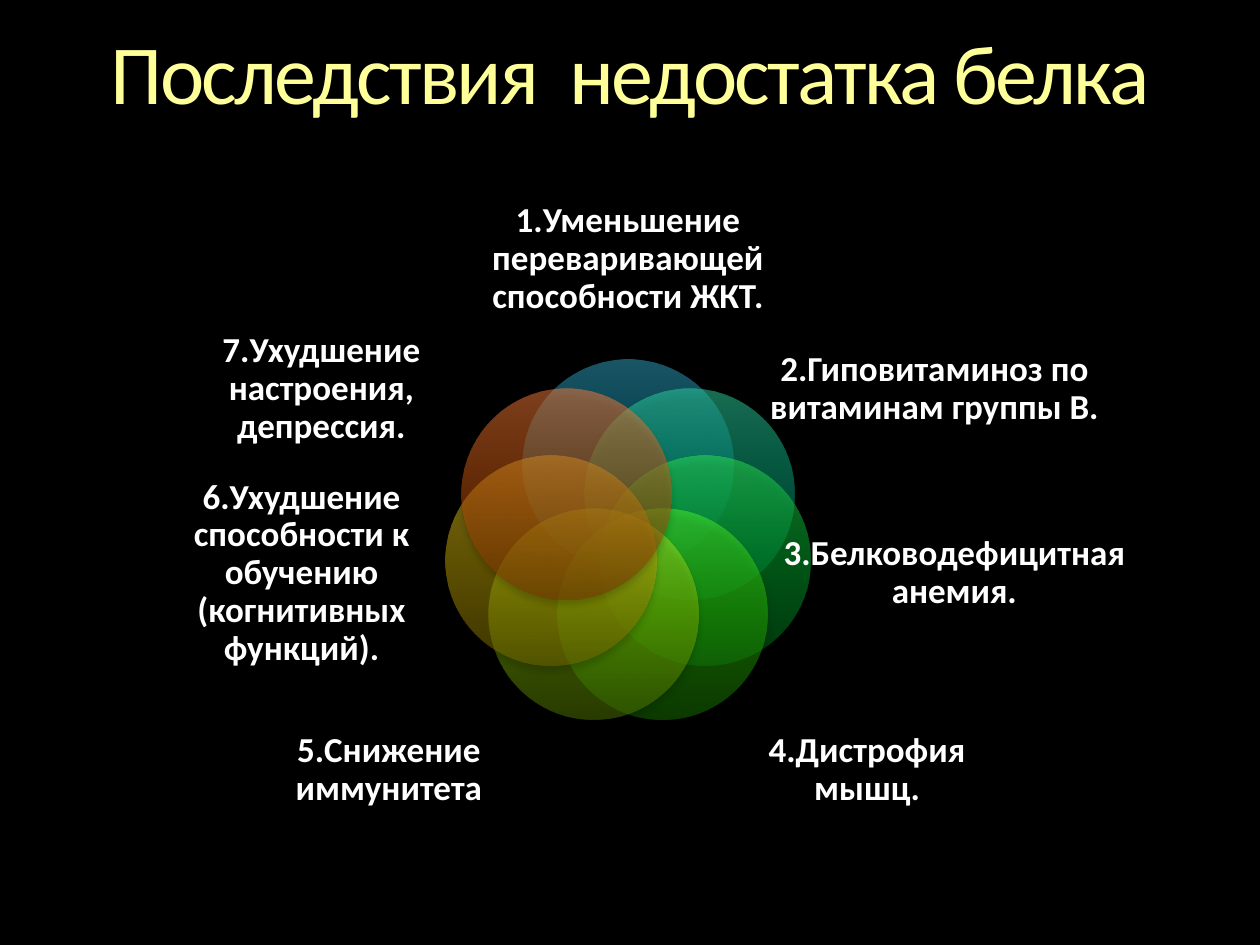
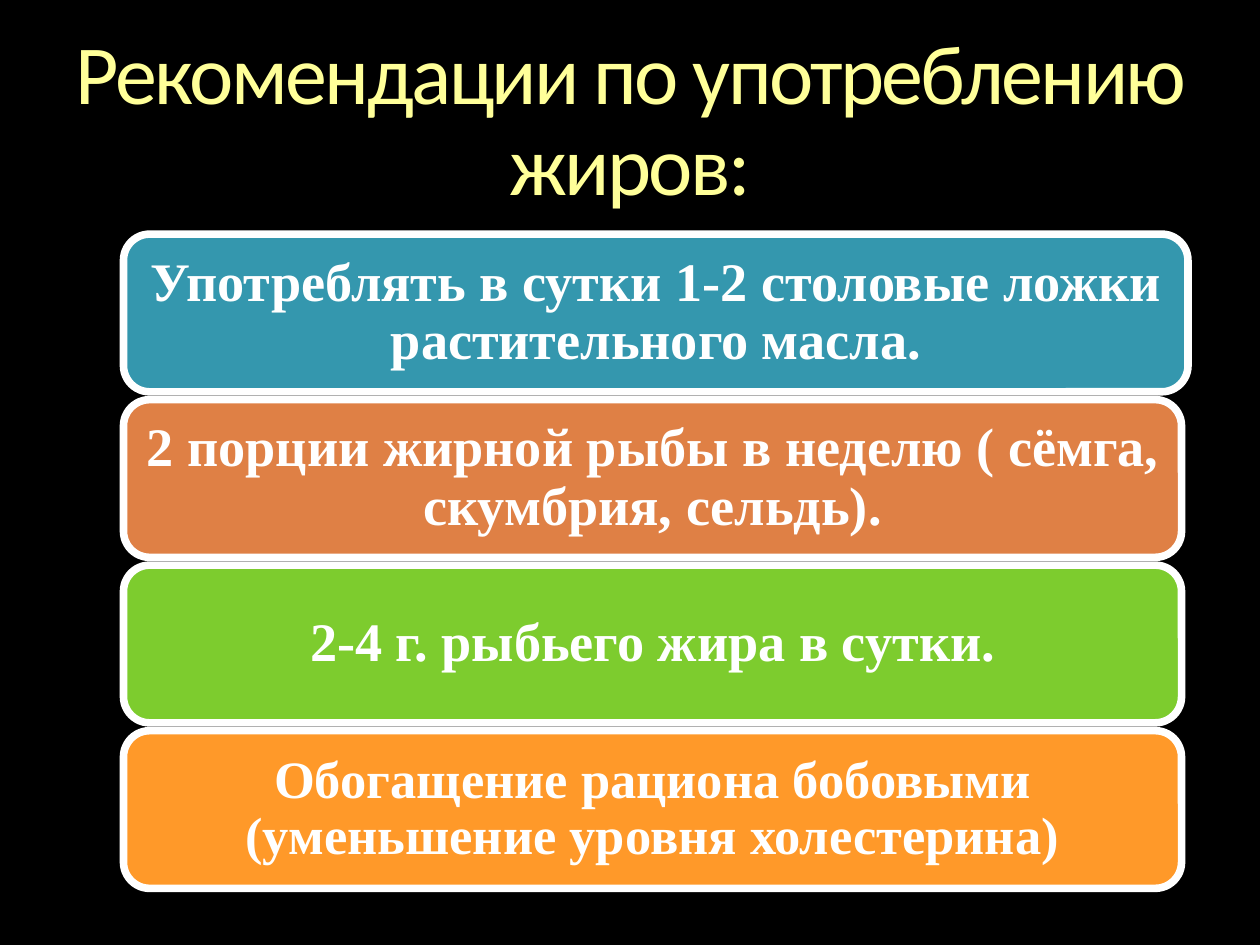
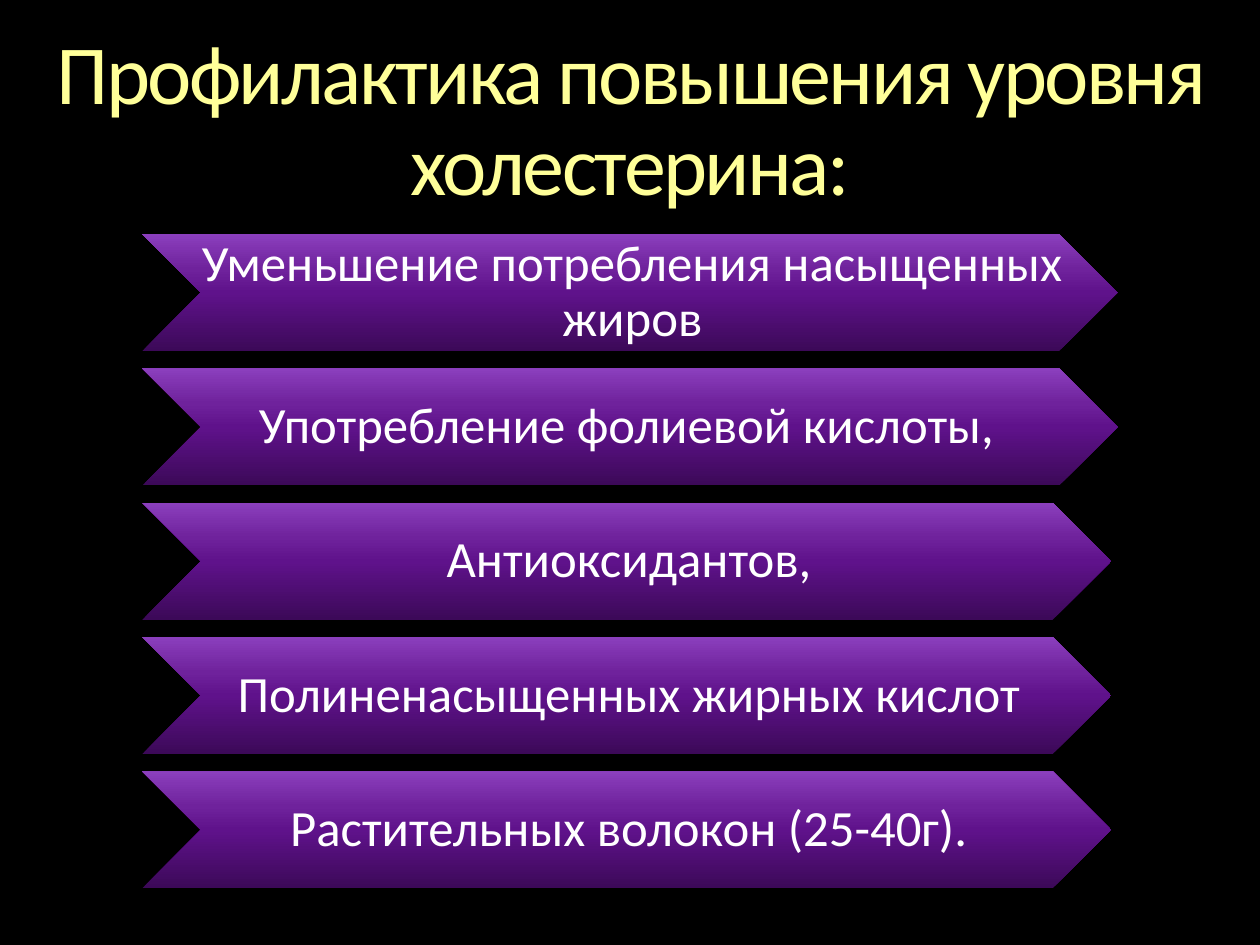
from dataclasses import dataclass
from math import cos, pi, sin

from lxml.etree import SubElement
from pptx import Presentation
from pptx.dml.color import RGBColor
from pptx.enum.shapes import MSO_SHAPE
from pptx.enum.text import MSO_ANCHOR, PP_ALIGN
from pptx.oxml.ns import qn
from pptx.util import Cm, Pt


@dataclass(frozen=True)
class Theme:
    back: str = "000000"
    ink: str = "FFFFFF"
    head: str = "FFFF99"
    sans: str = "Calibri"
    serif: str = "Times New Roman"
    title: int = 48
    label: int = 20
    card: int = 31
    arrow: int = 29
    stops: tuple = (0, 50, 70, 100)
    violet: tuple = ("3C0958", "5F128B", "6F229C", "8B3FBD")
    # Circle gradients, clockwise from the top
    rings: tuple = (
        ("015062", "077E99", "178EAB", "35ADCE"),
        ("00684B", "03A577", "14B889", "31DCA7"),
        ("006D1C", "00AF2C", "10C53B", "2EEA54"),
        ("187200", "27B700", "35CF0F", "4EF62C"),
        ("517600", "82BD02", "94D313", "B4FC2E"),
        ("7B6900", "C1A506", "D7BA17", "FFDE33"),
        ("7D3203", "C4520B", "DB631C", "FF803C"),
    )
    cards: tuple = ("3497AE", "DF8045", "7DCC2E", "FF9929")


@dataclass(frozen=True)
class Box:
    """A region in centimetres."""
    x: float
    y: float
    w: float
    h: float

    def emu(self):
        return Cm(self.x), Cm(self.y), Cm(self.w), Cm(self.h)

    @classmethod
    def around(cls, x, y, w, h):
        return cls(x - w / 2, y - h / 2, w, h)

    def rows(self, count, high):
        """Rows of one height, spread evenly from top to bottom."""
        step = (self.h - high) / (count - 1)
        return [Box(self.x, self.y + i * step, self.w, high) for i in range(count)]


THEME = Theme()
HEAD = Box(1.06, 0.64, 23.28, 3.68)


# Shared parts

def write(shape, text, size, font=THEME.sans, ink=THEME.ink, bold=False,
          anchor=MSO_ANCHOR.MIDDLE, pad=(0, 0, 0, 0)):
    frame = shape.text_frame
    frame.word_wrap = True
    frame.vertical_anchor = anchor
    (frame.margin_left, frame.margin_top,
     frame.margin_right, frame.margin_bottom) = map(Cm, pad)
    frame.text = text
    para = frame.paragraphs[0]
    para.alignment = PP_ALIGN.CENTER
    para.line_spacing = 0.9
    run = para.runs[0]
    run.font.name, run.font.size, run.font.bold = font, Pt(size), bold
    run.font.color.rgb = RGBColor.from_string(ink)
    return run


def label(slide, box, text, size, **style):
    return write(slide.shapes.add_textbox(*box.emu()), text, size, **style)


def glossy(slide, kind, box, tones, alpha=100):
    """A borderless shape with a bottom-to-top gradient and a soft shadow."""
    shape = slide.shapes.add_shape(kind, *box.emu())
    shape.line.fill.background()
    shape.fill.gradient()
    shape.fill.gradient_angle = 90
    props = shape.element.spPr
    stops = props.find(qn("a:gradFill")).find(qn("a:gsLst"))
    stops.clear()
    for pos, tone in zip(THEME.stops, tones):
        stop = SubElement(stops, qn("a:gs"), pos=str(pos * 1000))
        shade(stop, tone, alpha)
    shape.shadow.inherit = False
    cast = SubElement(props.find(qn("a:effectLst")), qn("a:outerShdw"),
                      blurRad=str(Pt(4)), dist=str(Pt(3)), dir="5400000",
                      rotWithShape="0")
    shade(cast, THEME.back, 35)
    return shape


def shade(parent, tone, alpha):
    color = SubElement(parent, qn("a:srgbClr"), val=tone)
    if alpha < 100:
        SubElement(color, qn("a:alpha"), val=str(alpha * 1000))


def page(deck, title):
    slide = deck.slides.add_slide(deck.slide_layouts[6])
    run = label(slide, HEAD, title, THEME.title, ink=THEME.head,
                anchor=MSO_ANCHOR.TOP)
    run.font._element.set("spc", "-150")
    return slide


# Regions

def wheel(slide, box, items):
    """Overlapping circles on a ring; each label is set off from the centre."""
    mid_x, mid_y = box.x + box.w / 2, box.y + box.h / 2
    size, reach = 4.24, 1.59
    for i, (tones, (text, dx, dy, wide, high)) in enumerate(zip(THEME.rings, items)):
        turn = 2 * pi * i / len(items)
        spot = Box.around(mid_x + reach * sin(turn), mid_y - reach * cos(turn),
                          size, size)
        glossy(slide, MSO_SHAPE.OVAL, spot, tones, alpha=50)
        label(slide, Box.around(mid_x + dx, mid_y + dy, wide, high), text,
              THEME.label, bold=True)


def cards(slide, box, items):
    """Rounded cards with a thick rim; the first is slightly wider."""
    rows = box.rows(len(items), 3.18)
    for i, (row, tone, text) in enumerate(zip(rows, THEME.cards, items)):
        wide = row.w if i == 0 else row.w - 0.13
        card = slide.shapes.add_shape(MSO_SHAPE.ROUNDED_RECTANGLE,
                                      *Box(row.x, row.y, wide, row.h).emu())
        card.shadow.inherit = False
        card.fill.solid()
        card.fill.fore_color.rgb = RGBColor.from_string(tone)
        card.line.color.rgb = RGBColor.from_string(THEME.ink)
        card.line.width = Pt(4.33)
        size = THEME.card - (i == len(items) - 1)
        write(card, text, size, font=THEME.serif, bold=True,
              pad=(0.17, 0, 0.17, 0))


def arrows(slide, box, items):
    """Chevrons; the text spans the full width, notch and tip included."""
    for i, (row, text) in enumerate(zip(box.rows(len(items), 2.36), items)):
        wide = row.w if i < 2 else row.w - 0.13
        spot = Box(row.x, row.y, wide, row.h)
        glossy(slide, MSO_SHAPE.CHEVRON, spot, THEME.violet)
        label(slide, spot, text, THEME.arrow, pad=(0.1, 0.05, 0, 0.05))


def main():
    deck = Presentation()
    deck.slide_width, deck.slide_height = Cm(25.4), Cm(19.05)
    back = deck.slide_master.background.fill
    back.solid()
    back.fore_color.rgb = RGBColor.from_string(THEME.back)

    # Text, offset from the centre, width and height of each label
    wheel(page(deck, "Последствия  недостатка белка"), Box(2.46, 3.94, 20.4, 14.02), [
        ("1.Уменьшение переваривающей способности ЖКТ.", 0, -5.72, 6.12, 2.59),
        ("2.Гиповитаминоз по витаминам группы В.", 6.18, -3.11, 7.72, 2.87),
        ("3.Белководефицитная анемия.", 6.58, 0.61, 7.72, 3.05),
        ("4.Дистрофия мышц.", 4.82, 4.57, 4.85, 2.79),
        ("5.Снижение иммунитета", -4.82, 4.57, 4.85, 2.79),
        ("6.Ухудшение способности к обучению (когнитивных функций).",
         -6.58, 0.61, 7.26, 3.05),
        ("7.Ухудшение настроения, депрессия.", -6.18, -3.11, 6.02, 2.87),
    ])

    cards(page(deck, "Рекомендации по употреблению жиров:"), Box(2.49, 4.72, 21.46, 13.19), [
        "Употреблять в сутки 1-2 столовые ложки растительного масла.",
        "2 порции жирной рыбы в неделю ( сёмга, скумбрия, сельдь).",
        "2-4 г. рыбьего жира в сутки.",
        "Обогащение рациона бобовыми (уменьшение уровня холестерина)",
    ])

    arrows(page(deck, "Профилактика повышения уровня холестерина:"), Box(2.87, 4.72, 19.66, 13.19), [
        "Уменьшение потребления насыщенных жиров",
        "Употребление фолиевой кислоты, ",
        "Антиоксидантов,",
        "Полиненасыщенных жирных кислот",
        "Растительных волокон (25-40г).",
    ])

    deck.save("out.pptx")


if __name__ == "__main__":
    main()
